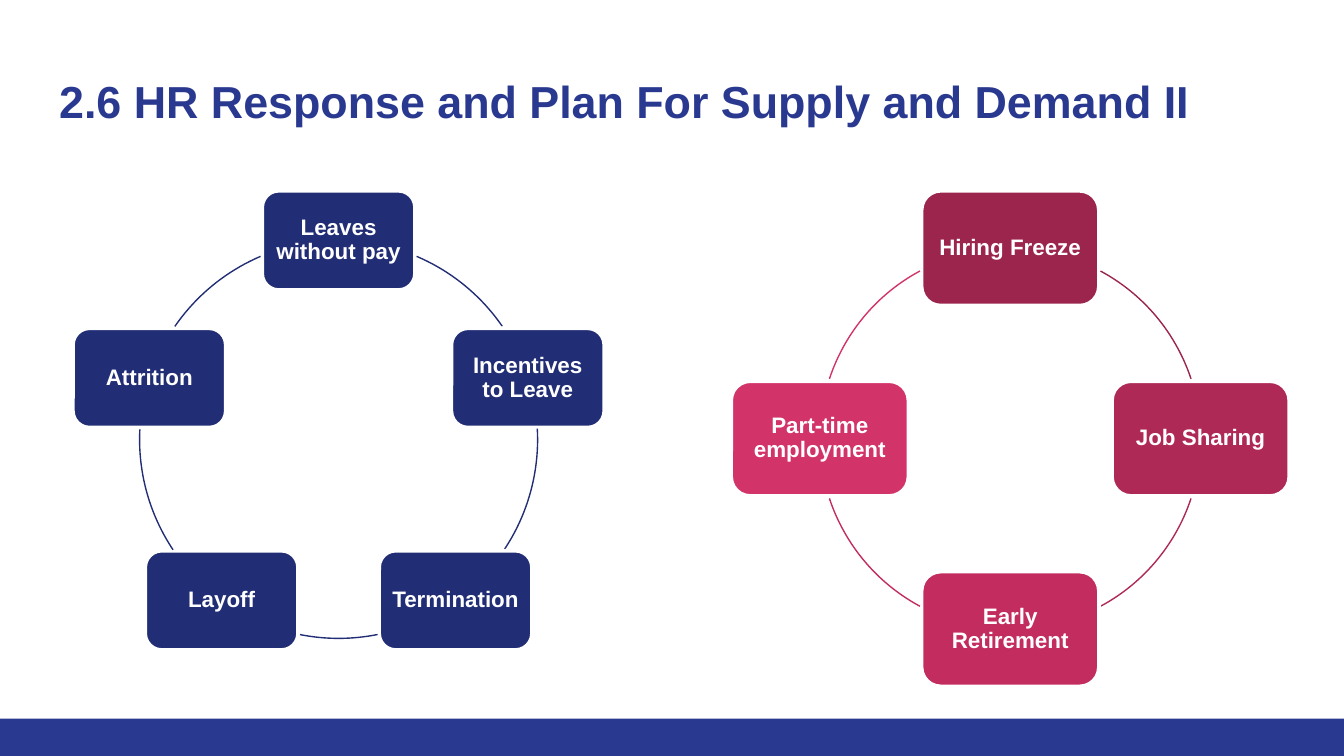
import math

from pptx import Presentation
from pptx.dml.color import RGBColor
from pptx.enum import shapes, text
from pptx.util import Pt

BLUE = RGBColor(0x2A, 0x39, 0x90)
NAVY = RGBColor(0x21, 0x2D, 0x74)
WINE = RGBColor(0x9C, 0x25, 0x4D)
BERRY = RGBColor(0xAF, 0x29, 0x56)
ROSE = RGBColor(0xC2, 0x2C, 0x5F)
PINK = RGBColor(0xD2, 0x33, 0x69)
WHITE = RGBColor(0xFF, 0xFF, 0xFF)
KIND = shapes.MSO_SHAPE


def place(kind, left, top, width, height, fill=None):
    """Add a shape without shadow or outline."""
    shape = slide.shapes.add_shape(kind, Pt(left), Pt(top), Pt(width), Pt(height))
    shape.shadow.inherit = False
    if fill is None:
        shape.fill.background()
    else:
        shape.fill.solid()
        shape.fill.fore_color.rgb = fill
    shape.line.fill.background()
    return shape


def write(shape, words, size, color, align, anchor, inset):
    """Fill a shape with one bold Arial paragraph."""
    frame = shape.text_frame
    frame.text = words
    frame.word_wrap = True
    frame.auto_size = text.MSO_AUTO_SIZE.NONE
    frame.vertical_anchor = anchor
    for side in ("left", "top", "right", "bottom"):
        setattr(frame, "margin_" + side, Pt(inset))
    para = frame.paragraphs[0]
    para.alignment = align
    run = para.runs[0]
    style = {"name": "Arial", "size": Pt(size), "bold": True}
    for key, value in style.items():
        setattr(run.font, key, value)
    run.font.color.rgb = color
    return para


prs = Presentation()
prs.slide_width, prs.slide_height = Pt(720), Pt(405)
slide = prs.slides.add_slide(prs.slide_layouts[5])

place(KIND.RECTANGLE, 0, 385, 720, 20, BLUE)

title = slide.shapes.title
title.left, title.top, title.width, title.height = Pt(24.5), Pt(32.4), Pt(682), Pt(47.5)
write(title, "2.6 HR Response and Plan For Supply and Demand II",
      24, BLUE, text.PP_ALIGN.LEFT, text.MSO_ANCHOR.TOP, 7.2)

# Each node: label, colour, start and end angle of the arc that follows it
# (degrees clockwise from three o'clock).
rings = [
    {"mid": (181.4, 235.4), "radius": 106.6, "box": (81.9, 53.2), "nodes": [
        ("Leaves without pay", NAVY, 293.1, 325.4),
        ("Incentives to Leave", NAVY, 356.9, 33.7),
        ("Termination", NAVY, 78.7, 101.3),
        ("Layoff", NAVY, 146.3, 183.1),
        ("Attrition", NAVY, 214.6, 246.9)]},
    {"mid": (541.2, 235), "radius": 102, "box": (95, 61.5), "nodes": [
        ("Hiring Freeze", WINE, 298.3, 341.7),
        ("Job Sharing", BERRY, 18.3, 61.7),
        ("Early Retirement", ROSE, 118.3, 161.7),
        ("Part-time employment", PINK, 198.3, 241.7)]},
]

for ring in rings:
    (x, y), r, (w, h) = ring["mid"], ring["radius"], ring["box"]
    step = 2 * math.pi / len(ring["nodes"])
    for i, (label, color, start, end) in enumerate(ring["nodes"]):
        left = x + r * math.sin(i * step) - w / 2
        top = y - r * math.cos(i * step) - h / 2
        box = place(KIND.ROUNDED_RECTANGLE, left, top, w, h, color)
        box.line.color.rgb = WHITE
        box.line.width = Pt(2)
        para = write(box, label, 12, WHITE, text.PP_ALIGN.CENTER,
                     text.MSO_ANCHOR.MIDDLE, 3)
        para.line_spacing = 0.9

        arc = place(KIND.ARC, x - r, y - r, 2 * r, 2 * r)
        arc.line.color.rgb = color
        arc.line.width = Pt(0.75)
        # Angles are stored in 1/60000 degree, adjustments in 1/100000.
        arc.adjustments[0] = start * 0.6
        arc.adjustments[1] = end * 0.6

prs.save("out.pptx")
